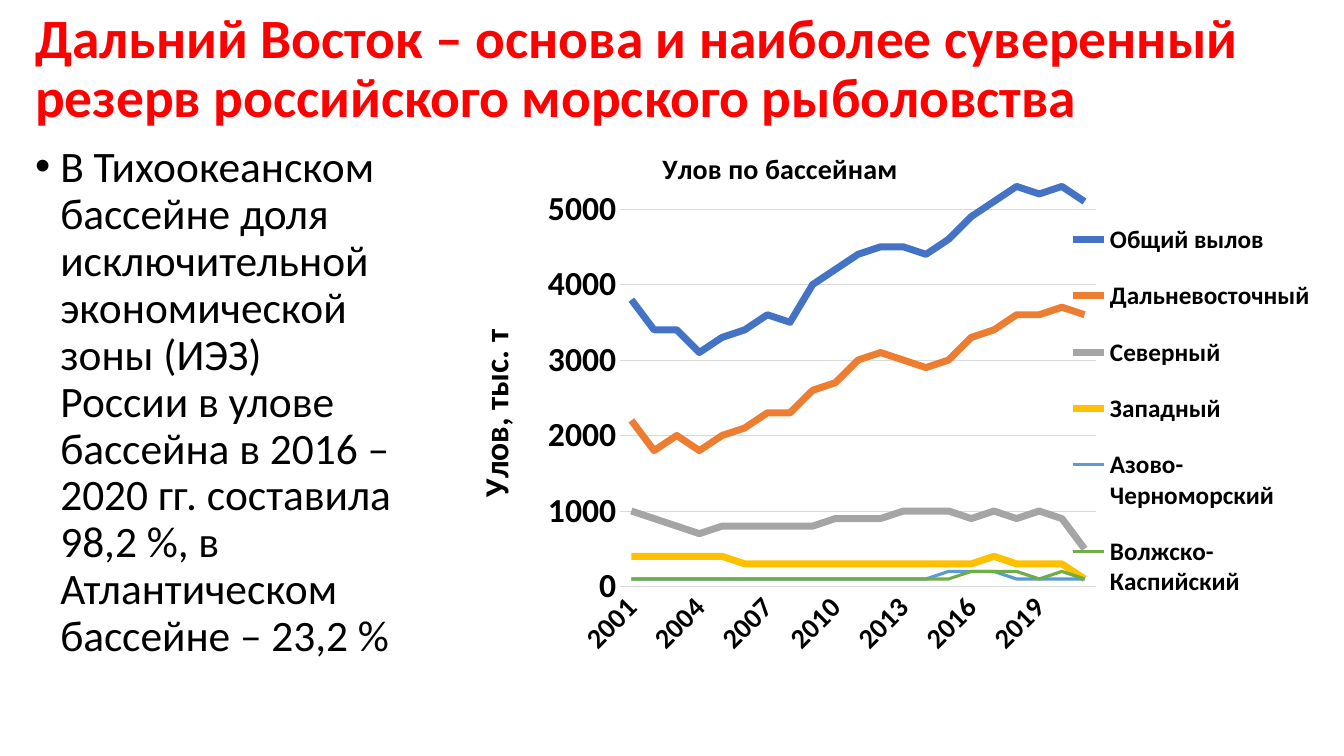
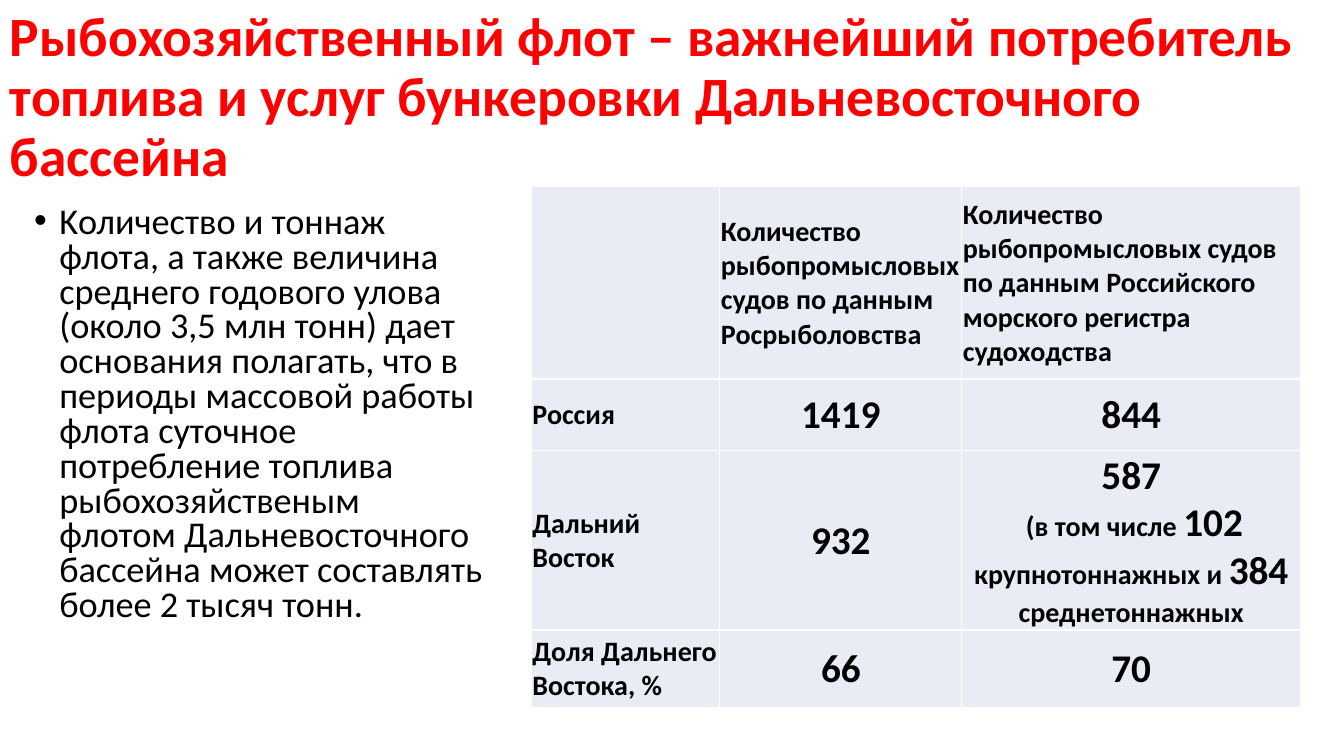
"""Build two slides on the Far East fishing basin and its fleet."""
from pptx import Presentation
from pptx.chart.data import CategoryChartData
from pptx.dml.color import RGBColor
from pptx.enum.chart import XL_CHART_TYPE, XL_LEGEND_POSITION, XL_TICK_MARK
from pptx.enum.text import MSO_ANCHOR, PP_ALIGN
from pptx.oxml import parse_xml
from pptx.oxml.ns import nsdecls, qn
from pptx.util import Pt

PX = 9144
FONT, BLACK, RED, WHITE = "Calibri", "000000", "FF0000", "FFFFFF"
GRID, CELL = "D9D9D9", "E9EBF5"

PAGES = [
    dict(title="Дальний Восток – основа и наиболее суверенный резерв российского "
               "морского рыболовства",
         head=(25, 0, 1294, 139), size=31, lead=0.9, box=(25, 139, 377, 525),
         body="В Тихоокеанском бассейне доля исключительной экономической зоны (ИЭЗ) "
              "России в улове бассейна в 2016 – 2020 гг. составила 98,2 %, "
              "в Атлантическом бассейне – 23,2 %"),
    dict(title="Рыбохозяйственный флот – важнейший потребитель топлива и услуг "
               "бункеровки Дальневосточного бассейна",
         head=(0, 11, 1324, 174), size=25.9, lead=0.8, box=(24, 200, 466, 476),
         body="Kоличество и тоннаж флота, а также величина среднего годового улова "
              "(около 3,5 млн тонн) дает основания полагать, что в периоды массовой "
              "работы флота суточное потребление топлива рыбохозяйственым флотом "
              "Дальневосточного бассейна может составлять более 2 тысяч тонн."),
]

YEARS = range(2001, 2022)
UNIT = 100
CHART = (395, 139, 924, 537)
CATCH = [
    ("Общий вылов", "4472C4", 5,
     [38, 34, 34, 31, 33, 34, 36, 35, 40, 42, 44, 45, 45, 44, 46, 49, 51, 53, 52, 53, 51]),
    ("Дальневосточный", "ED7D31", 5,
     [22, 18, 20, 18, 20, 21, 23, 23, 26, 27, 30, 31, 30, 29, 30, 33, 34, 36, 36, 37, 36]),
    ("Северный", "A5A5A5", 5,
     [10, 9, 8, 7, 8, 8, 8, 8, 8, 9, 9, 9, 10, 10, 10, 9, 10, 9, 10, 9, 5]),
    ("Западный", "FFC000", 5,
     [4, 4, 4, 4, 4, 3, 3, 3, 3, 3, 3, 3, 3, 3, 3, 3, 4, 3, 3, 3, 1]),
    ("Азово-Черноморский", "5B9BD5", 2.25,
     [1, 1, 1, 1, 1, 1, 1, 1, 1, 1, 1, 1, 1, 1, 2, 2, 2, 1, 1, 1, 1]),
    ("Волжско-Каспийский", "70AD47", 2.25,
     [1, 1, 1, 1, 1, 1, 1, 1, 1, 1, 1, 1, 1, 1, 1, 2, 2, 2, 1, 2, 1]),
]

COLS, ROWS = [187, 240, 336], [191, 71, 178, 77]
SMALL, LARGE = 20, 28
FLEET = [
    ["", "Количество рыбопромысловых судов по данным Росрыболовства",
     "Количество рыбопромысловых судов по данным Российского морского регистра "
     "судоходства"],
    ["Россия", "1419", "844"],
    [["Дальний", "Восток"], "932",
     ["587", [(" (в том числе ", SMALL), ("102", LARGE), (" крупнотоннажных и ", SMALL),
              ("384", LARGE), (" среднетоннажных", SMALL)]]],
    ["Доля Дальнего Востока, %", "66", "70"],
]


def paint(code):
    return RGBColor.from_string(code)


def area(box):
    return [n * PX for n in box]


def style(font, size, bold=True, color=BLACK):
    font.name, font.size, font.bold = FONT, Pt(size), bold
    font.color.rgb = paint(color)


def write(frame, lines, size, bold=True, color=BLACK, align=None, lead=None,
          bullet=False):
    """Fill a text frame with paragraphs, each a string or a list of sized runs."""
    frame.word_wrap = True
    for i, line in enumerate(lines):
        para = frame.paragraphs[0] if i == 0 else frame.add_paragraph()
        para.alignment, para.line_spacing = align, lead
        if bullet:
            para.space_before = Pt(10)
            props = para._p.get_or_add_pPr()
            props.set("marL", str(25 * PX))
            props.set("indent", str(-25 * PX))
            props.append(parse_xml(f'<a:buFont {nsdecls("a")} typeface="Arial"/>'))
            props.append(parse_xml(f'<a:buChar {nsdecls("a")} char="•"/>'))
        for part, points in [(line, size)] if isinstance(line, str) else line:
            run = para.add_run()
            run.text = part
            style(run.font, points, bold, color)


def start(deck, page):
    slide = deck.slides.add_slide(deck.slide_layouts[6])
    head = slide.shapes.add_textbox(*area(page["head"])).text_frame
    head.vertical_anchor = MSO_ANCHOR.MIDDLE
    write(head, [page["title"]], 39.6, color=RED, lead=0.9)
    body = slide.shapes.add_textbox(*area(page["box"])).text_frame
    write(body, [page["body"]], page["size"], bold=False, lead=page["lead"], bullet=True)
    return slide


def place(node, prior, spot, inner=False):
    """Fix a chart part at a spot given in px from the chart's corner."""
    for old in node.findall(qn("c:layout")):
        node.remove(old)
    rows = '<c:layoutTarget val="inner"/>' if inner else ""
    rows += "".join(f'<c:{k}Mode val="edge"/>' for k in "xy")
    rows += "".join(f'<c:{k} val="{n / full:.4f}"/>'
                    for k, n, full in zip("xywh", spot, CHART[2:] * 2))
    part = parse_xml(f'<c:layout {nsdecls("c")}><c:manualLayout>{rows}'
                     '</c:manualLayout></c:layout>')
    if prior:
        node.find(qn(prior)).addnext(part)
    else:
        node.insert(0, part)


def rule(line, color, width):
    line.color.rgb, line.width = paint(color), Pt(width)


def name(title, words, size, spot):
    write(title.text_frame, [words], size)
    place(title._element, "c:tx", spot)


def plot(slide):
    data = CategoryChartData(number_format="0")
    data.categories = [str(year) for year in YEARS]
    for label, _, _, vals in CATCH:
        data.add_series(label, [v * UNIT for v in vals])
    chart = slide.shapes.add_chart(XL_CHART_TYPE.LINE, *area(CHART), data).chart
    style(chart.font, 11)
    chart.has_title = True
    name(chart.chart_title, "Улов по бассейнам", 20, (257, 4))
    chart.chart_title._element.find(qn("c:overlay")).set("val", "1")
    place(chart._chartSpace.chart.plotArea, None, (220, 31, 472, 412), inner=True)

    for line, (_, color, width, _) in zip(chart.plots[0].series, CATCH):
        rule(line.format.line, color, width)
        line.smooth = False

    cat, val = chart.category_axis, chart.value_axis
    for axis, size in (cat, 20), (val, 24):
        style(axis.tick_labels.font, size)
        axis.major_tick_mark = axis.minor_tick_mark = XL_TICK_MARK.NONE
    rule(cat.format.line, GRID, 0.75)
    cat._element.txPr.bodyPr.set("rot", "-2700000")
    val.minimum_scale, val.maximum_scale, val.major_unit = 0, 5500, 1000
    val.format.line.fill.background()
    rule(val.major_gridlines.format.line, GRID, 0.75)
    name(val.axis_title, "Улов, тыс. т", 24, (68, 182))
    val.axis_title.text_frame._txBody.bodyPr.set("rot", "-5400000")

    chart.has_legend = True
    legend = chart.legend
    legend.position, legend.include_in_layout = XL_LEGEND_POSITION.RIGHT, False
    style(legend.font, 18)
    place(legend._element, "c:legendPos", (657, 58, 259, 421))


def edge(cell):
    props = cell._tc.get_or_add_tcPr()
    for side in "LRTB":
        props.append(parse_xml(
            f'<a:ln{side} {nsdecls("a")} w="12700"><a:solidFill>'
            f'<a:srgbClr val="{WHITE}"/></a:solidFill></a:ln{side}>'))


def tally(slide, left, top):
    box = (left, top, sum(COLS), sum(ROWS))
    table = slide.shapes.add_table(len(ROWS), len(COLS), *area(box)).table
    for col, width in zip(table.columns, COLS):
        col.width = width * PX
    for row, height in zip(table.rows, ROWS):
        row.height = height * PX
    for r, line in enumerate(FLEET):
        for c, item in enumerate(line):
            cell = table.cell(r, c)
            edge(cell)
            cell.fill.solid()
            cell.fill.fore_color.rgb = paint(CELL)
            cell.vertical_anchor = MSO_ANCHOR.MIDDLE
            cell.margin_left = cell.margin_right = cell.margin_top = PX
            cell.margin_bottom = 0
            count = r > 0 and c > 0
            write(cell.text_frame, [item] if isinstance(item, str) else item,
                  LARGE if count else SMALL, align=PP_ALIGN.CENTER if count else None)


def main():
    deck = Presentation()
    deck.slide_width, deck.slide_height = area((1333, 750))
    first, second = [start(deck, page) for page in PAGES]
    plot(first)
    tally(second, 527, 185)
    deck.save("out.pptx")


if __name__ == "__main__":
    main()
